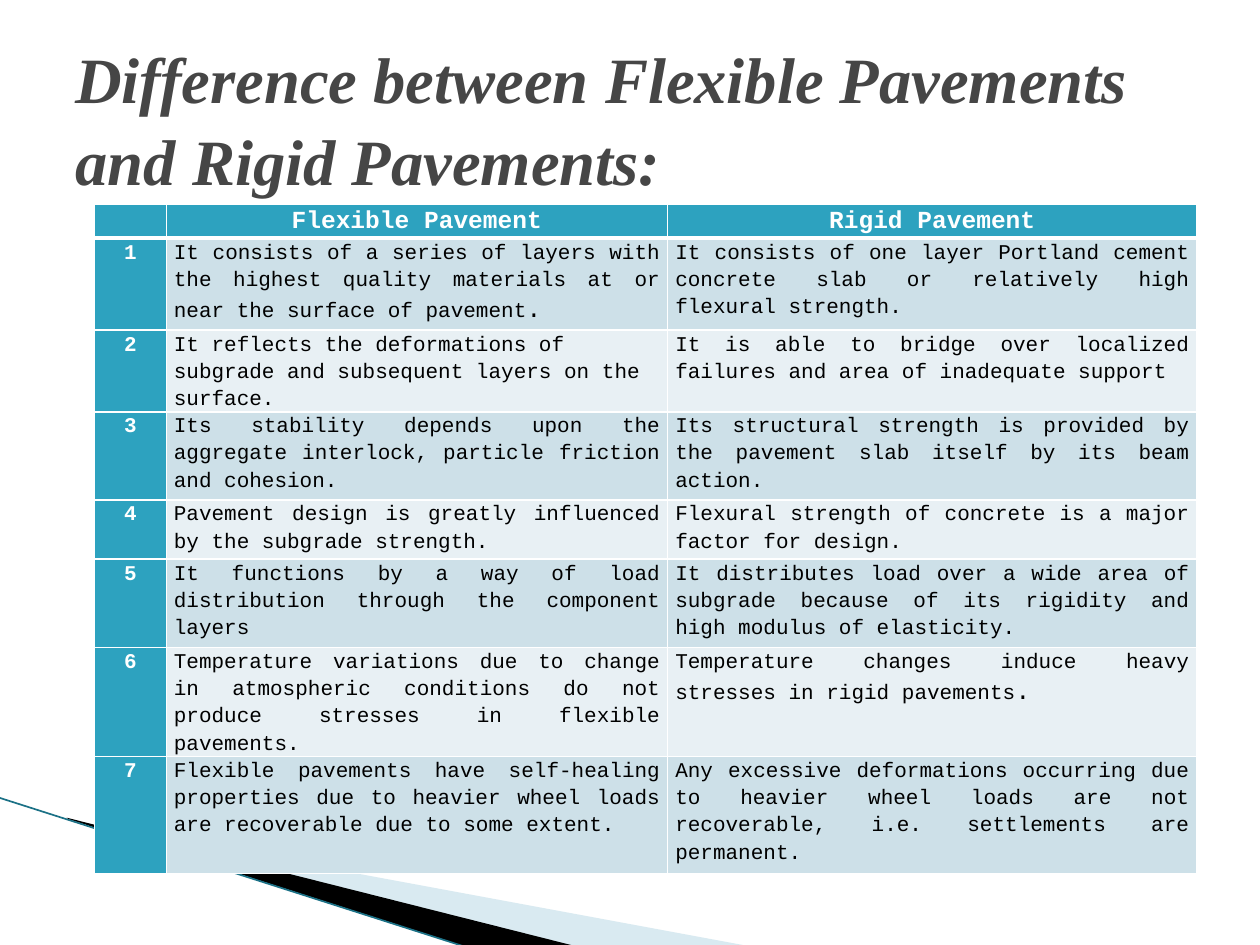
from lxml import etree
from pptx import Presentation
from pptx import util as u
from pptx.dml.color import RGBColor
from pptx.enum import shapes, text
from pptx.oxml import ns

COLORS = {"teal": "2DA2BF", "band": "CDE0E8", "pale": "E8F0F4", "white": "FFFFFF",
          "black": "000000", "title": "464646", "wedge": "A0CBDC", "edge": "1B7186"}
ALIGN = text.PP_ALIGN


def add_span(para, words, size, color, font="Courier New", bold=False):
    span = para.add_run()
    span.text = words
    span.font.size = u.Pt(size)
    span.font.name = font
    span.font.bold = bold
    span.font.color.rgb = RGBColor.from_string(COLORS[color])
    return span


def add_border(cell, side, width):
    props = cell._tc.get_or_add_tcPr()
    line = etree.Element(ns.qn("a:" + side), w=str(u.Pt(width)))
    fill = etree.SubElement(line, ns.qn("a:solidFill"))
    etree.SubElement(fill, ns.qn("a:srgbClr"), val=COLORS["white"])
    props.insert(["lnL", "lnR", "lnT", "lnB"].index(side), line)


deck = Presentation()
deck.slide_width, deck.slide_height = u.Inches(10), u.Inches(7.5)
page = deck.slides.add_slide(deck.slide_layouts[6])

# Decorative wedges in the lower left corner
wedges = [
    ("wedge", 40, [(0.55, 6.51), (5.95, 7.51), (4.56, 7.51), (0.55, 6.5)]),
    ("black", 100, [(0.53, 6.49), (4.57, 7.51), (3.72, 7.52), (0.54, 6.5)]),
]
for color, opacity, points in wedges:
    corners = [(u.Inches(x), u.Inches(y)) for x, y in points]
    builder = page.shapes.build_freeform(*corners[0])
    builder.add_line_segments(corners[1:])
    wedge = builder.convert_to_shape()
    wedge.shadow.inherit = False
    wedge.fill.solid()
    wedge.fill.fore_color.rgb = RGBColor.from_string(COLORS[color])
    wedge.line.fill.background()
    if opacity < 100:
        tint = wedge._element.spPr.find(".//" + ns.qn("a:srgbClr"))
        etree.SubElement(tint, ns.qn("a:alpha"), val=str(opacity * 1000))

edge = page.shapes.add_connector(shapes.MSO_CONNECTOR.STRAIGHT, u.Inches(-0.01),
                                 u.Inches(6.33), u.Inches(3.71), u.Inches(7.52))
edge.line.color.rgb = RGBColor.from_string(COLORS["edge"])
edge.line.width = u.Pt(0.95)
etree.SubElement(edge._element.spPr, ns.qn("a:effectLst"))

# Comparison table
rows = [
    ("", "Flexible Pavement", "Rigid Pavement"),
    ("1", "It consists of a series of layers with the highest quality materials at or "
          "near the surface of pavement.",
     "It consists of one layer Portland cement concrete slab or relatively high "
     "flexural strength."),
    ("2", "It reflects the deformations of subgrade and subsequent layers on the surface.",
     "It is able to bridge over localized failures and area of inadequate support"),
    ("3", "Its stability depends upon the aggregate interlock, particle friction and cohesion.",
     "Its structural strength is provided by the pavement slab itself by its beam action."),
    ("4", "Pavement design is greatly influenced by the subgrade strength.",
     "Flexural strength of concrete is a major factor for design."),
    ("5", "It functions by a way of load distribution through the component layers",
     "It distributes load over a wide area of subgrade because of its rigidity and "
     "high modulus of elasticity."),
    ("6", "Temperature variations due to change in atmospheric conditions do not produce "
          "stresses in flexible pavements.",
     "Temperature changes induce heavy stresses in rigid pavements."),
    ("7", "Flexible pavements have self-healing properties due to heavier wheel loads are "
          "recoverable due to some extent.",
     "Any excessive deformations occurring due to heavier wheel loads are not "
     "recoverable, i.e. settlements are permanent."),
]
widths = [0.57, 3.98, 4.2]
heights = [0.27, 0.73, 0.47, 0.7, 0.47, 0.7, 0.7, 0.93]
large_stops = [(1, 1), (6, 2)]  # cells whose full stop is set larger
left_aligned = (2, 1)

table = page.shapes.add_table(len(rows), len(widths), u.Inches(0.75), u.Inches(1.62),
                              u.Inches(sum(widths)), u.Inches(sum(heights))).table
for column, width in zip(table.columns, widths):
    column.width = u.Inches(width)
for row, height in zip(table.rows, heights):
    row.height = u.Inches(height)

for r, row in enumerate(rows):
    for c, words in enumerate(row):
        cell = table.cell(r, c)
        heading = r == 0 or c == 0
        cell.margin_left = cell.margin_right = u.Inches(0.06)
        cell.margin_top = cell.margin_bottom = 0
        cell.fill.solid()
        color = "teal" if heading else "band" if r % 2 else "pale"
        cell.fill.fore_color.rgb = RGBColor.from_string(COLORS[color])
        for side in ("lnL", "lnR", "lnT", "lnB"):
            thick = (r, side) in [(0, "lnB"), (1, "lnT")]
            add_border(cell, side, 3 if thick else 1)

        para = cell.text_frame.paragraphs[0]
        para.line_spacing = 1.15
        if heading:
            para.alignment = ALIGN.CENTER
        else:
            para.alignment = ALIGN.LEFT if (r, c) == left_aligned else ALIGN.JUSTIFY
        size = 14 if r == 0 else 12
        ink = "white" if heading else "black"
        if not words:
            etree.SubElement(para._p, ns.qn("a:endParaRPr"), sz="1200")
        elif (r, c) in large_stops:
            add_span(para, words[:-1], size, ink)
            add_span(para, words[-1], 14, ink)
        else:
            add_span(para, words, size, ink, bold=heading)

# Title
box = page.shapes.add_textbox(u.Inches(0.5), u.Inches(0.3), u.Inches(9), u.Inches(1.25))
box.text_frame.word_wrap = True
box.text_frame.vertical_anchor = text.MSO_ANCHOR.MIDDLE
para = box.text_frame.paragraphs[0]
para.line_spacing = 1.05
span = add_span(para, "Difference between Flexible Pavements and Rigid Pavements:",
                36.9, "title", "Times New Roman", True)
span.font.italic = True

deck.save("out.pptx")
